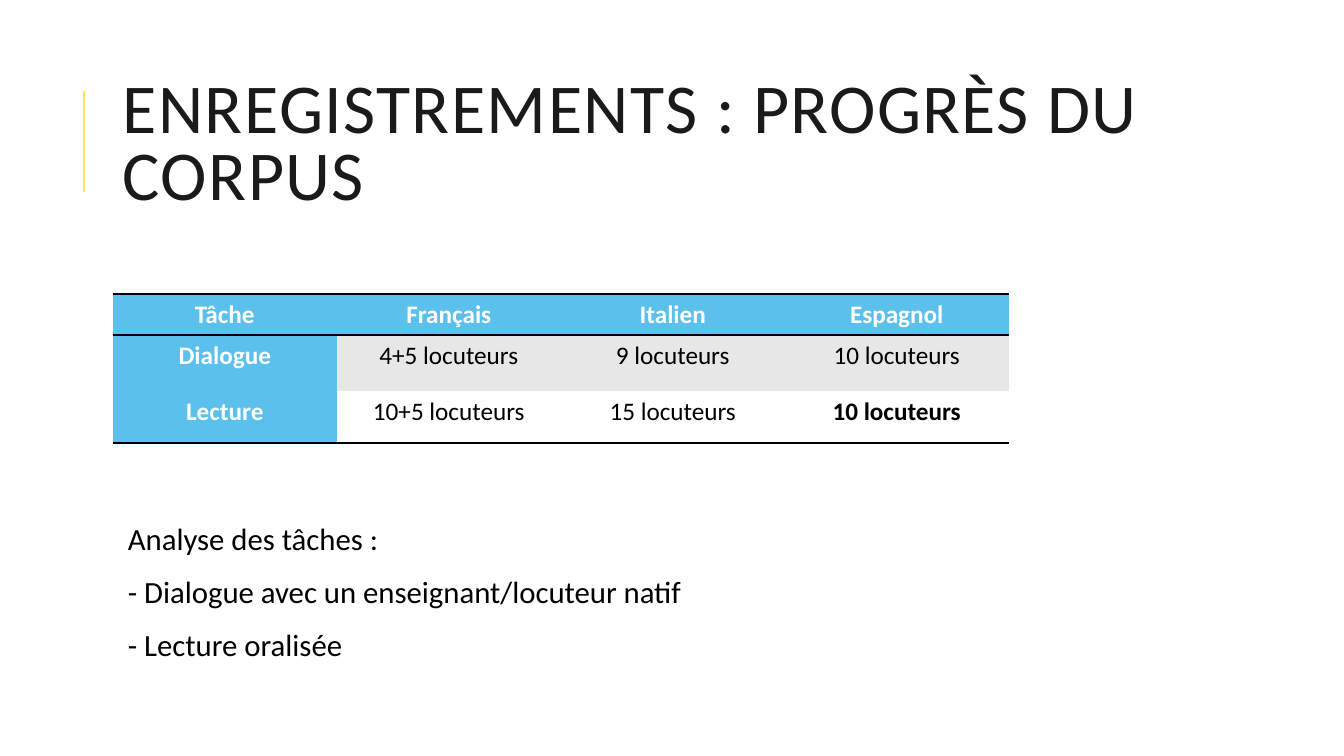
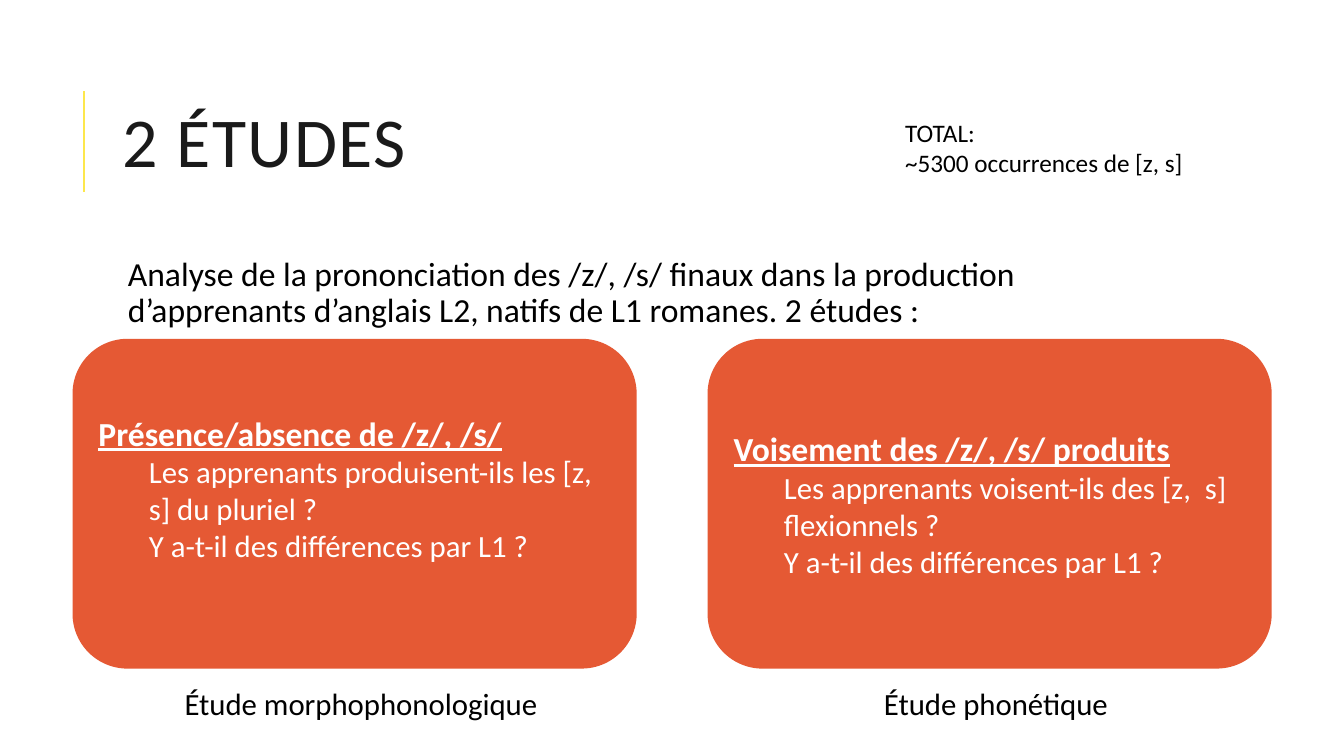
from dataclasses import dataclass

from lxml.etree import SubElement
from pptx import Presentation
from pptx.dml.color import RGBColor
from pptx.enum.shapes import MSO_CONNECTOR, MSO_SHAPE
from pptx.enum.text import MSO_ANCHOR, MSO_AUTO_SIZE, PP_ALIGN
from pptx.oxml.ns import qn
from pptx.presentation import Presentation as Deck
from pptx.slide import Slide
from pptx.table import _Cell
from pptx.text.text import TextFrame, _Paragraph
from pptx.util import Pt

BLACK = RGBColor(0x00, 0x00, 0x00)
WHITE = RGBColor(0xFF, 0xFF, 0xFF)
INK = RGBColor(0x1A, 0x1A, 0x1A)
YELLOW = RGBColor(0xFD, 0xE7, 0x4C)
BLUE = RGBColor(0x5B, 0xC0, 0xEB)
GREY = RGBColor(0xE7, 0xE7, 0xE7)
ORANGE = RGBColor(0xE5, 0x59, 0x34)

FONT = "Calibri"
LEFT = 80.6
WIDTH = 765.4
NO_GRID_STYLE = "{2D5ABB26-0587-4C30-8999-92F81FD0307C}"


@dataclass(frozen=True)
class Box:
    left: float
    top: float
    width: float
    height: float

    def emu(self) -> tuple[int, int, int, int]:
        return Pt(self.left), Pt(self.top), Pt(self.width), Pt(self.height)


@dataclass(frozen=True)
class Study:
    left: float
    heading: str
    questions: tuple[str, ...]
    caption: str
    lift: float = 0  # extra bottom inset that raises the centred text


TABLE = (
    ("Tâche", "Français", "Italien", "Espagnol"),
    ("Dialogue", "4+5 locuteurs", "9 locuteurs", "10 locuteurs"),
    ("Lecture", "10+5 locuteurs", "15 locuteurs", "10 locuteurs"),
)
ROW_HEIGHTS = (29, 40, 37)
ROW_FILLS = (BLUE, GREY, WHITE)
COLUMN_WIDTH = 160
BOLD_RESULT = (2, 3)

STUDIES = (
    Study(51.8, "Présence/absence de /z/, /s/",
          ("Les apprenants produisent-ils les [z, s] du pluriel ?",
           "Y a-t-il des différences par L1 ?"),
          "Étude morphophonologique", lift=22),
    Study(505.4, "Voisement des /z/, /s/ produits",
          ("Les apprenants voisent-ils des [z,  s] flexionnels ?",
           "Y a-t-il des différences par L1 ?"),
          "Étude phonétique"),
)


def style(p: _Paragraph, size: float, color: RGBColor, bold: bool = False,
          align: PP_ALIGN = PP_ALIGN.LEFT) -> None:
    p.alignment = align
    p.font.name = FONT
    p.font.size = Pt(size)
    p.font.color.rgb = color
    p.font.bold = bold


def add_text(slide: Slide, box: Box, lines: tuple[str, ...], size: float,
             align: PP_ALIGN = PP_ALIGN.LEFT) -> TextFrame:
    tf = slide.shapes.add_textbox(*box.emu()).text_frame
    tf.word_wrap = True
    tf.text = "\n".join(lines)
    for p in tf.paragraphs:
        style(p, size, BLACK, align=align)
    return tf


def add_body(slide: Slide, top: float, height: float,
             lines: tuple[str, ...], size: float) -> None:
    tf = add_text(slide, Box(LEFT, top, WIDTH, height), lines, size)
    tf.margin_left = Pt(10.8)
    tf.margin_top = tf.margin_right = tf.margin_bottom = Pt(3.6)
    for p in tf.paragraphs:
        p.line_spacing = 0.9
        p.space_before = Pt(12)
        p.space_after = Pt(2)


def add_titled_slide(prs: Deck, title: str) -> Slide:
    slide = prs.slides.add_slide(prs.slide_layouts[5])
    rule = slide.shapes.add_connector(
        MSO_CONNECTOR.STRAIGHT, Pt(60), Pt(137), Pt(60), Pt(65))
    rule.line.color.rgb = YELLOW
    rule.line.width = Pt(1.5)
    SubElement(rule._element.spPr, qn("a:effectLst"))

    sp = slide.shapes.title
    sp.left, sp.top, sp.width, sp.height = Box(LEFT, 46, WIDTH, 118).emu()
    tf = sp.text_frame
    tf.text = title
    tf.word_wrap = True
    tf.auto_size = MSO_AUTO_SIZE.NONE
    tf.vertical_anchor = MSO_ANCHOR.MIDDLE
    p = tf.paragraphs[0]
    style(p, 50, INK)
    p.line_spacing = 0.8
    p.runs[0].font._element.set("spc", "100")
    return slide


def add_border(cell: _Cell, side: str) -> None:
    """Draw a black rule on one side, "T" or "B"; call before filling the cell."""
    ln = SubElement(cell._tc.get_or_add_tcPr(), qn(f"a:ln{side}"), w=str(Pt(2)))
    fill = SubElement(ln, qn("a:solidFill"))
    SubElement(fill, qn("a:srgbClr"), val=str(BLACK))


def add_corpus_table(slide: Slide) -> None:
    rows, cols = len(TABLE), len(TABLE[0])
    box = Box(LEFT, 210.2, cols * COLUMN_WIDTH, sum(ROW_HEIGHTS))
    table = slide.shapes.add_table(rows, cols, *box.emu()).table
    table._tbl.tblPr.find(qn("a:tableStyleId")).text = NO_GRID_STYLE
    table.first_row = table.horz_banding = False
    for column in table.columns:
        column.width = Pt(COLUMN_WIDTH)
    for r, texts in enumerate(TABLE):
        table.rows[r].height = Pt(ROW_HEIGHTS[r])
        for c, text in enumerate(texts):
            cell = table.cell(r, c)
            header = r == 0 or c == 0
            if r == 0:
                add_border(cell, "T")
            if r in (0, rows - 1):
                add_border(cell, "B")
            cell.fill.solid()
            cell.fill.fore_color.rgb = BLUE if header else ROW_FILLS[r]
            cell.text = text
            style(cell.text_frame.paragraphs[0], 18, WHITE if header else BLACK,
                  bold=header or (r, c) == BOLD_RESULT, align=PP_ALIGN.CENTER)


def add_study(slide: Slide, study: Study) -> None:
    sp = slide.shapes.add_shape(
        MSO_SHAPE.ROUNDED_RECTANGLE, *Box(study.left, 242, 403, 235.6).emu())
    sp.shadow.inherit = False
    sp.fill.solid()
    sp.fill.fore_color.rgb = ORANGE
    sp.line.fill.background()

    tf = sp.text_frame
    tf.word_wrap = True
    tf.vertical_anchor = MSO_ANCHOR.MIDDLE
    tf.margin_bottom = Pt(3.6 + study.lift)
    tf.text = "\n".join((study.heading, *study.questions))
    heading, *questions = tf.paragraphs
    style(heading, 24, WHITE, bold=True)
    heading.font.underline = True
    for p in questions:
        style(p, 22, WHITE)
        p.level = 1
        pPr = p._p.get_or_add_pPr()
        pPr.set("marL", str(Pt(36)))
        pPr.set("indent", "0")

    add_text(slide, Box(study.left + 50, 485.3, 312, 34), (study.caption,), 22,
             PP_ALIGN.CENTER)


def build_corpus_slide(prs: Deck) -> None:
    slide = add_titled_slide(prs, "ENREGISTREMENTS : PROGRÈS DU CORPUS")
    add_corpus_table(slide)
    add_body(slide, 371, 126, (
        "Analyse des tâches :",
        "- Dialogue avec un enseignant/locuteur natif",
        "- Lecture oralisée",
    ), 22)


def build_studies_slide(prs: Deck) -> None:
    slide = add_titled_slide(prs, "2 ÉTUDES")
    add_body(slide, 180, 60, (
        "Analyse de la prononciation des /z/, /s/ finaux dans la production "
        "d’apprenants d’anglais L2, natifs de L1 romanes. 2 études :",
    ), 24)
    for study in STUDIES:
        add_study(slide, study)
    add_text(slide, Box(639.4, 80, 254, 51),
             ("TOTAL:", "~5300 occurrences de [z, s]"), 18)


def main() -> None:
    prs = Presentation()
    prs.slide_width, prs.slide_height = Pt(960), Pt(540)
    build_corpus_slide(prs)
    build_studies_slide(prs)
    prs.save("out.pptx")


if __name__ == "__main__":
    main()
